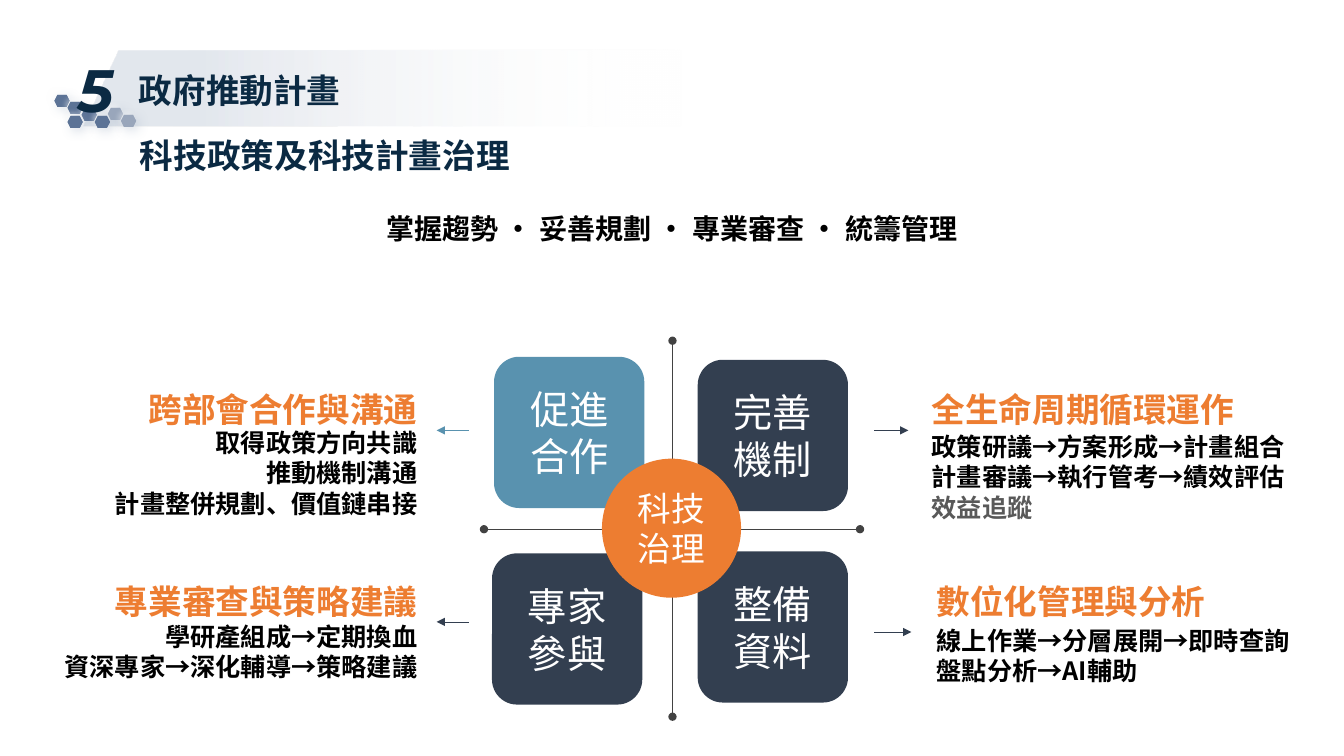
import lxml.etree
import pptx
import pptx.dml.color
import pptx.enum.shapes
import pptx.enum.text
import pptx.oxml.ns
import pptx.util

PX = 9144
CJK = "Noto Sans CJK SC"
RGB = pptx.dml.color.RGBColor
WHITE = RGB(0xFF, 0xFF, 0xFF)
BLACK = RGB(0, 0, 0)
NAVY = RGB(0x0B, 0x2A, 0x43)
SLATE = RGB(0x33, 0x3F, 0x50)
TEAL = RGB(0x59, 0x92, 0xAF)
ORANGE = RGB(0xED, 0x7D, 0x31)
GRAY = RGB(0x59, 0x59, 0x59)
AXIS = RGB(0x42, 0x42, 0x42)
MIST = RGB(0xA2, 0xB1, 0xC6)
HEX_DARK = RGB(0x5C, 0x73, 0x96)
HEX_LIGHT = RGB(0x99, 0xA6, 0xBB)

SHAPE = pptx.enum.shapes.MSO_SHAPE
LEFT, CENTER, RIGHT = (pptx.enum.text.PP_ALIGN.LEFT, pptx.enum.text.PP_ALIGN.CENTER,
                       pptx.enum.text.PP_ALIGN.RIGHT)
MIDDLE = pptx.enum.text.MSO_ANCHOR.MIDDLE


def px(*values):
    return [pptx.util.Emu(v * PX) for v in values]


def sub(parent, tag, **attrs):
    return lxml.etree.SubElement(parent, pptx.oxml.ns.qn(tag), attrs)


def write(tf, lines, size, color, align, bold=False, font=CJK):
    tf.word_wrap = True
    for i, line in enumerate(lines):
        p = tf.paragraphs[0] if i == 0 else tf.add_paragraph()
        p.add_run().text = line
        p.alignment = align
        p.font.size = pptx.util.Pt(size)
        p.font.bold = bold
        p.font.color.rgb = color
        p.font.name = font
        sub(p.font._rPr, "a:ea", typeface=font)


def add_text(slide, box, lines, size, color, align=LEFT, inset=True):
    tf = slide.shapes.add_textbox(*px(*box)).text_frame
    if not inset:
        tf.margin_left = tf.margin_right = tf.margin_top = tf.margin_bottom = 0
    write(tf, lines, size, color, align, bold=True)
    tf.auto_size = pptx.enum.text.MSO_AUTO_SIZE.SHAPE_TO_FIT_TEXT
    return tf


def add_shape(slide, kind, box, fill):
    sp = slide.shapes.add_shape(kind, *px(*box))
    sp.shadow.inherit = False
    sp.line.fill.background()
    if fill is None:
        sp.fill.background()
    else:
        sp.fill.solid()
        sp.fill.fore_color.rgb = fill
    return sp


def add_label(slide, kind, box, fill, lines, size):
    tf = add_shape(slide, kind, box, fill).text_frame
    tf.vertical_anchor = MIDDLE
    write(tf, lines, size, WHITE, CENTER)


def add_line(slide, start, end, color, width, head, tail="none"):
    line = slide.shapes.add_connector(pptx.enum.shapes.MSO_CONNECTOR.STRAIGHT,
                                      *px(*start, *end))
    line.line.color.rgb = color
    line.line.width = pptx.util.Pt(width)
    ln = line.line._get_or_add_ln()
    sub(ln, "a:headEnd", type=head)
    sub(ln, "a:tailEnd", type=tail)
    sub(line._element.spPr, "a:effectLst")


def add_hexagon(slide, left, top, fill):
    for color, blur, angle in ((MIST, 8, 45), (WHITE, 4, 225)):
        sp = add_shape(slide, SHAPE.HEXAGON, (left, top, 15, 12), fill)
        effects = sp._element.spPr.find(pptx.oxml.ns.qn("a:effectLst"))
        shadow = sub(effects, "a:outerShdw", blurRad=str(blur * 12700), dist=str(3 * 12700),
                     dir=str(angle * 60000), algn="ctr", rotWithShape="0")
        sub(sub(shadow, "a:srgbClr", val=str(color)), "a:alpha", val="40000")


def add_banner(slide):
    builder = slide.shapes.build_freeform(83, 125, scale=PX)
    builder.add_line_segments([(118, 50), (1042, 49), (1044, 126)], close=True)
    sp = builder.convert_to_shape()
    sp.shadow.inherit = False
    sp.line.fill.background()
    sp.fill.gradient()
    sp.fill.gradient_angle = 180
    looks = ((0.38, WHITE, 0), (0.88, MIST, 30))
    for stop, (position, color, alpha) in zip(sp.fill.gradient_stops, looks):
        stop.position = position
        stop.color.rgb = color
    colors = sp._element.spPr.iter(pptx.oxml.ns.qn("a:srgbClr"))
    for element, (position, color, alpha) in zip(list(colors), looks):
        sub(element, "a:alpha", val=str(alpha * 1000))


def add_header(slide):
    add_banner(slide)
    for left, top, fill in ((54, 94, HEX_DARK), (67, 101, HEX_DARK), (81, 108, HEX_DARK),
                            (107, 107, HEX_LIGHT), (120, 114, HEX_LIGHT),
                            (67, 115, HEX_DARK), (94, 115, HEX_DARK)):
        add_hexagon(slide, left, top, fill)
    tf = add_shape(slide, SHAPE.ROUNDED_RECTANGLE, (48, 46, 94, 84), None).text_frame
    tf.margin_left = tf.margin_right = 0
    tf.vertical_anchor = MIDDLE
    write(tf, ["5"], 42.7, NAVY, CENTER, bold=True, font="Montserrat")
    tf.paragraphs[0].font.italic = True
    title = add_text(slide, (128, 47, 606, 64), ["政府推動計畫"], 24, NAVY)
    title.vertical_anchor = MIDDLE
    title.paragraphs[0].line_spacing = 1.5
    add_text(slide, (129, 129, 750, 50), ["科技政策及科技計畫治理"], 24, NAVY)
    add_text(slide, (126, 205, 1081, 44),
             ["掌握趨勢 • 妥善規劃 • 專業審查 • 統籌管理"], 20, BLACK, CENTER)


def add_topic(slide, left, width, top, body_top, align, heading, lines):
    add_text(slide, (left, top, width, 40), [heading], 24, ORANGE, align, inset=False)
    return add_text(slide, (left, body_top, width, 30 * len(lines)), lines, 18, BLACK,
                    align, inset=False)


def main():
    prs = pptx.Presentation()
    prs.slide_width, prs.slide_height = px(1333, 750)
    slide = prs.slides.add_slide(prs.slide_layouts[6])
    add_header(slide)

    for left, top, fill, lines in ((692, 547, SLATE, ["整備", "資料"]),
                                   (488, 549, SLATE, ["專家", "參與"]),
                                   (692, 357, SLATE, ["完善", "機制"]),
                                   (490, 354, TEAL, ["促進", "合作"])):
        add_label(slide, SHAPE.ROUNDED_RECTANGLE, (left, top, 149, 150), fill, lines, 28)

    add_line(slide, (667, 338), (667, 711), AXIS, 1, "oval", "oval")
    add_line(slide, (480, 525), (853, 525), AXIS, 1, "oval", "oval")
    for tip, end, y, color in ((433, 465, 427, TEAL), (433, 465, 617, SLATE),
                               (904, 867, 627, SLATE), (901, 867, 427, SLATE)):
        add_line(slide, (tip, y), (end, y), color, 0.5, "triangle")

    add_topic(slide, 51, 363, 386, 424, RIGHT, "跨部會合作與溝通",
              ["取得政策方向共識", "推動機制溝通", "計畫整併規劃、價值鏈串接"])
    add_topic(slide, 51, 363, 576, 616, RIGHT, "專業審查與策略建議",
              ["學研產組成→定期換血", "資深專家→深化輔導→策略建議"])
    add_topic(slide, 929, 375, 576, 620, LEFT, "數位化管理與分析",
              ["線上作業→分層展開→即時查詢", "盤點分析→AI輔助"])
    cycle = add_topic(slide, 924, 380, 386, 428, LEFT, "全生命周期循環運作",
                      ["政策研議→方案形成→計畫組合", "計畫審議→執行管考→績效評估", "效益追蹤"])
    cycle.paragraphs[2].font.color.rgb = GRAY

    add_label(slide, SHAPE.OVAL, (597, 455, 138, 138), ORANGE, ["科技", "治理"], 24)
    prs.save("out.pptx")


if __name__ == "__main__":
    main()
